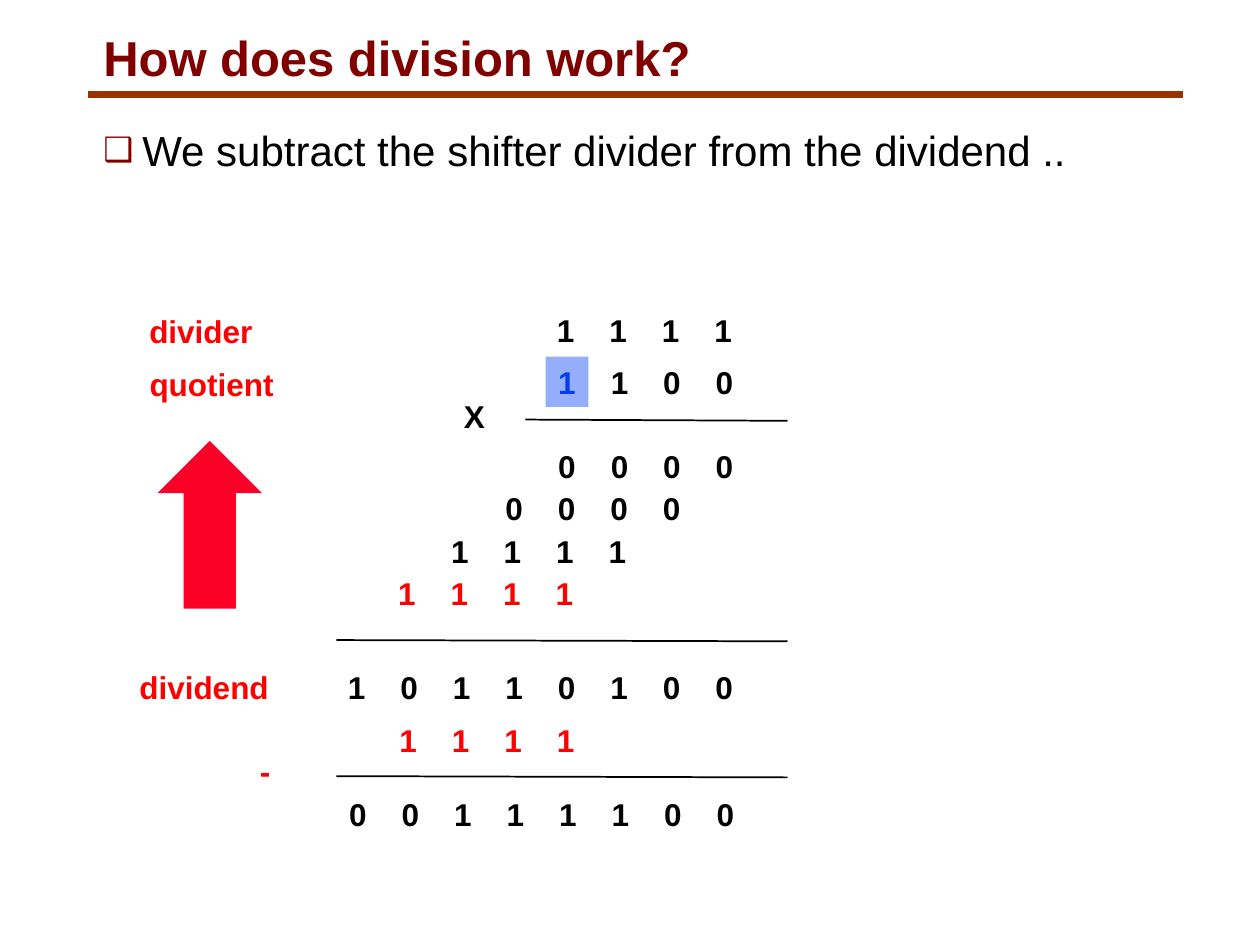
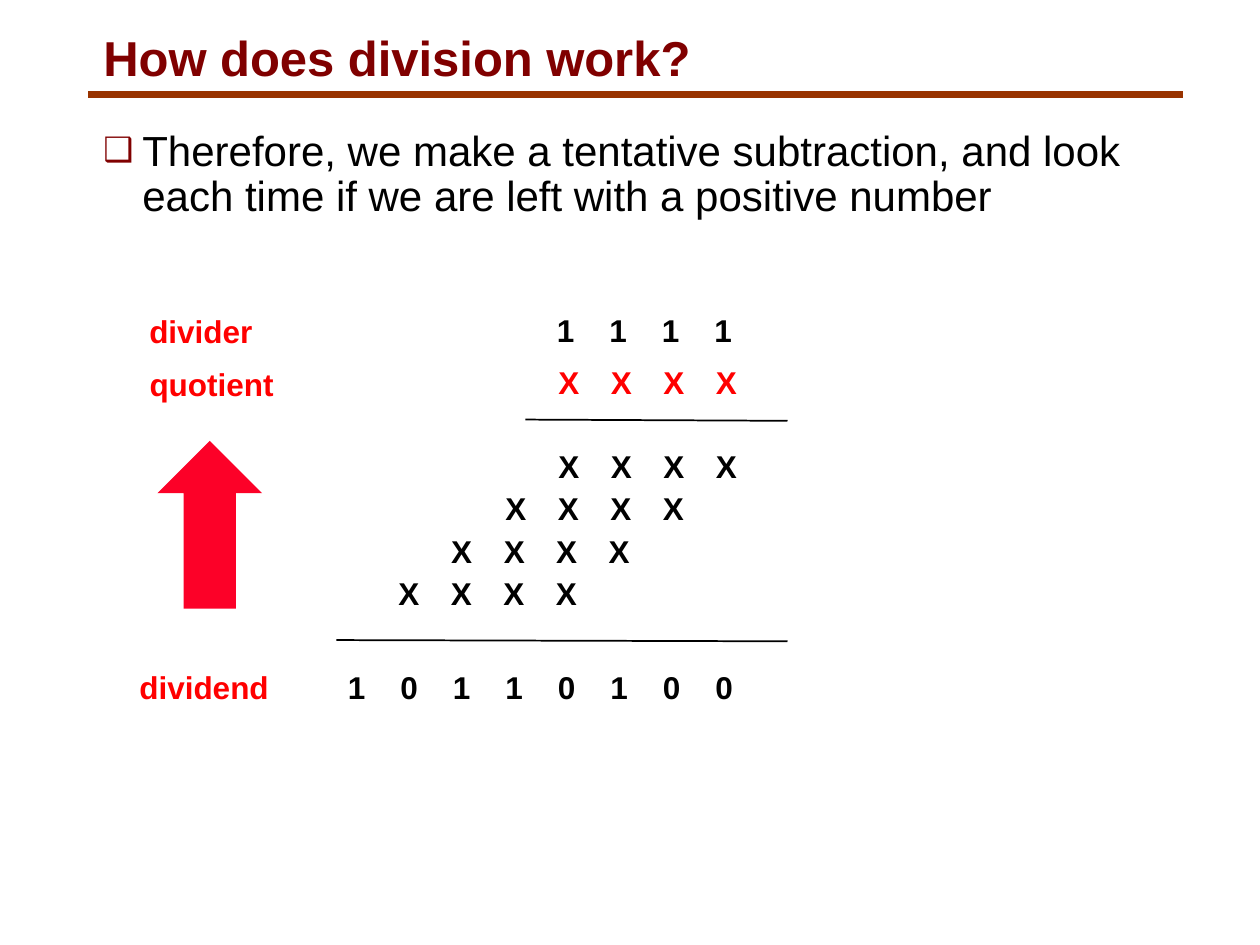
from dataclasses import dataclass

from lxml.etree import SubElement
from pptx import Presentation
from pptx.dml.color import RGBColor
from pptx.enum.shapes import MSO_CONNECTOR, MSO_SHAPE
from pptx.enum.text import MSO_ANCHOR, MSO_AUTO_SIZE, PP_ALIGN
from pptx.oxml.ns import qn
from pptx.util import Inches, Pt


@dataclass(frozen=True)
class Theme:
    """Colours, type sizes and font shared by the slides."""

    font: str = "Arial"
    title: str = "800000"
    rule: str = "993300"
    ink: str = "000000"
    accent: str = "FF0000"
    arrow: str = "FC0128"
    highlight: str = "95AEFC"
    highlight_ink: str = "063DE8"
    title_size: int = 28
    body_size: int = 24
    digit_size: int = 18


THEME = Theme()
TITLE = "How does division work?"
TITLE_BOX = (0.75, 0.25, 4.86, 0.47)
FIGURE_ORIGIN = (1, 2.42)
DIGIT_PITCH = 5 / 12
DIGIT_WIDTHS = {"X": 0.37, "-": 0.29}
CELL_HEIGHT = 0.4
PARTIAL_SPOTS = [(3.33, 1.08), (2.91, 1.41), (2.48, 1.75), (2.06, 2.09)]
LABELS = [("divider", 0.08, 0.01, 1.03), ("quotient", 0.08, 0.43, 1.2), ("dividend", 0, 2.83, 1.24)]


def add_run(paragraph, text, size, color, bold=False):
    """Add one formatted run to a paragraph."""
    run = paragraph.add_run()
    run.text = text
    run.font.name = THEME.font
    run.font.size = Pt(size)
    run.font.bold = bold
    run.font.color.rgb = RGBColor.from_string(color)


def add_line(shapes, start, end, color, width):
    """Draw a straight line without a shadow."""
    points = [Inches(value) for value in (*start, *end)]
    line = shapes.add_connector(MSO_CONNECTOR.STRAIGHT, *points)
    line.line.color.rgb = RGBColor.from_string(color)
    line.line.width = Pt(width)
    SubElement(line.element.spPr, qn("a:effectLst"))
    return line


def prepare_layout(presentation):
    """Return the content layout, cleared of its footer fields."""
    layout = presentation.slide_layouts[1]
    for placeholder in list(layout.placeholders)[2:]:
        layout.shapes.element.remove(placeholder.element)
    return layout


def prepare_placeholder(placeholder, box, wrap):
    """Place a placeholder and return its first paragraph."""
    placeholder.left, placeholder.top, placeholder.width, placeholder.height = map(Inches, box)
    frame = placeholder.text_frame
    frame.margin_left = frame.margin_right = Inches(0.07)
    frame.margin_top = frame.margin_bottom = Inches(0.03)
    frame.word_wrap = wrap
    frame.auto_size = MSO_AUTO_SIZE.SHAPE_TO_FIT_TEXT
    frame.vertical_anchor = MSO_ANCHOR.TOP
    paragraph = frame.paragraphs[0]
    paragraph.alignment = PP_ALIGN.LEFT
    paragraph.space_before = Pt(0)
    return paragraph


def add_title(slide):
    """Write the slide title."""
    paragraph = prepare_placeholder(slide.shapes.title, TITLE_BOX, False)
    paragraph.line_spacing = 0.87
    add_run(paragraph, TITLE, THEME.title_size, THEME.title, True)


def add_statement(slide, text, box):
    """Write the bulleted statement in the body placeholder."""
    paragraph = prepare_placeholder(slide.placeholders[1], box, True)
    paragraph.line_spacing = 0.9
    properties = paragraph._p.get_or_add_pPr()
    properties.set("marL", str(Inches(0.31)))
    properties.set("indent", str(Inches(-0.31)))
    bullet_color = SubElement(properties, qn("a:buClr"))
    SubElement(bullet_color, qn("a:srgbClr"), val=THEME.title)
    SubElement(properties, qn("a:buSzPct"), val="80000")
    SubElement(properties, qn("a:buFont"), typeface=THEME.font)
    SubElement(properties, qn("a:buChar"), char="❑")
    add_run(paragraph, text, THEME.body_size, THEME.ink)


def add_cell(slide, text, left, top, width, color=THEME.ink, fill=None):
    """Add one bold label or digit."""
    cell = slide.shapes.add_textbox(*map(Inches, (left, top, width, CELL_HEIGHT)))
    frame = cell.text_frame
    frame.word_wrap = False
    frame.auto_size = MSO_AUTO_SIZE.SHAPE_TO_FIT_TEXT
    if fill:
        cell.fill.solid()
        cell.fill.fore_color.rgb = RGBColor.from_string(fill)
    paragraph = frame.paragraphs[0]
    paragraph.alignment = PP_ALIGN.CENTER
    add_run(paragraph, text, THEME.digit_size, color, True)


def add_digits(slide, origin, digits, left, top, color=THEME.ink, highlight_first=False):
    """Add a row of evenly pitched digits."""
    for column, digit in enumerate(digits):
        marked = highlight_first and column == 0
        add_cell(
            slide,
            digit,
            origin[0] + left + column * DIGIT_PITCH,
            origin[1] + top,
            DIGIT_WIDTHS.get(digit, 0.34),
            THEME.highlight_ink if marked else color,
            THEME.highlight if marked else None,
        )


def add_sum_line(slide, origin, left, top):
    """Draw a line that closes a column sum."""
    x, y = origin
    add_line(slide.shapes, (x + 5.25, y + top + 0.01), (x + left, y + top), THEME.ink, 1)


def add_arrow(slide, origin):
    """Draw the arrow from the dividend up to the quotient."""
    box = (origin[0] + 0.25, origin[1] + 1.08, 0.83, 1.33)
    arrow = slide.shapes.add_shape(MSO_SHAPE.UP_ARROW, *map(Inches, box))
    arrow.shadow.inherit = False
    arrow.fill.solid()
    arrow.fill.fore_color.rgb = RGBColor.from_string(THEME.arrow)
    arrow.line.fill.background()


def add_division(slide, origin, quotient, partials, last_color, quotient_color, highlight_first):
    """Lay out the multiplication scheme read upwards as a division."""
    for text, left, top, width in LABELS:
        add_cell(slide, text, origin[0] + left, origin[1] + top, width, THEME.accent)
    add_digits(slide, origin, "1111", 3.32, 0)
    add_digits(slide, origin, quotient, 3.33, 0.41, quotient_color, highlight_first)
    add_sum_line(slide, origin, 3.17, 0.91)
    colors = [THEME.ink] * 3 + [last_color]
    for digits, (left, top), color in zip(partials, PARTIAL_SPOTS, colors):
        add_digits(slide, origin, digits, left, top, color)
    add_sum_line(slide, origin, 1.67, 2.66)
    add_digits(slide, origin, "10110100", 1.66, 2.83)
    add_arrow(slide, origin)


def add_subtraction(slide, origin):
    """Subtract the shifted divider below the dividend."""
    add_digits(slide, origin, "X", 2.58, 0.68)
    add_digits(slide, origin, "1111", 2.07, 3.25, THEME.accent)
    add_sum_line(slide, origin, 1.67, 3.74)
    add_digits(slide, origin, "-", 0.96, 3.5, THEME.accent)
    add_digits(slide, origin, "00111100", 1.67, 3.84)


def add_content_slide(presentation, layout, statement, body_height):
    """Add a slide with its title and statement."""
    slide = presentation.slides.add_slide(layout)
    add_title(slide)
    add_statement(slide, statement, (0.75, 1, 8.58, body_height))
    return slide


def main():
    """Build and save the presentation."""
    presentation = Presentation()
    presentation.slide_width, presentation.slide_height = Inches(10), Inches(7.5)
    layout = prepare_layout(presentation)

    shifted = add_content_slide(
        presentation, layout, "We subtract the shifter divider from the dividend ..", 0.42
    )
    title_rule = add_line(shifted.shapes, (0.7, 0.75), (9.39, 0.75), THEME.rule, 4.5)
    layout.shapes.element.append(title_rule.element)
    add_division(
        shifted, FIGURE_ORIGIN, "1100", ["0000", "0000", "1111", "1111"],
        THEME.accent, THEME.ink, True,
    )
    add_subtraction(shifted, FIGURE_ORIGIN)

    tentative = add_content_slide(
        presentation,
        layout,
        "Therefore, we make a tentative subtraction, and look each time "
        "if we are left with a positive number",
        0.78,
    )
    add_division(
        tentative, FIGURE_ORIGIN, "XXXX", ["XXXX"] * 4, THEME.ink, THEME.accent, False
    )
    presentation.save("out.pptx")


if __name__ == "__main__":
    main()
